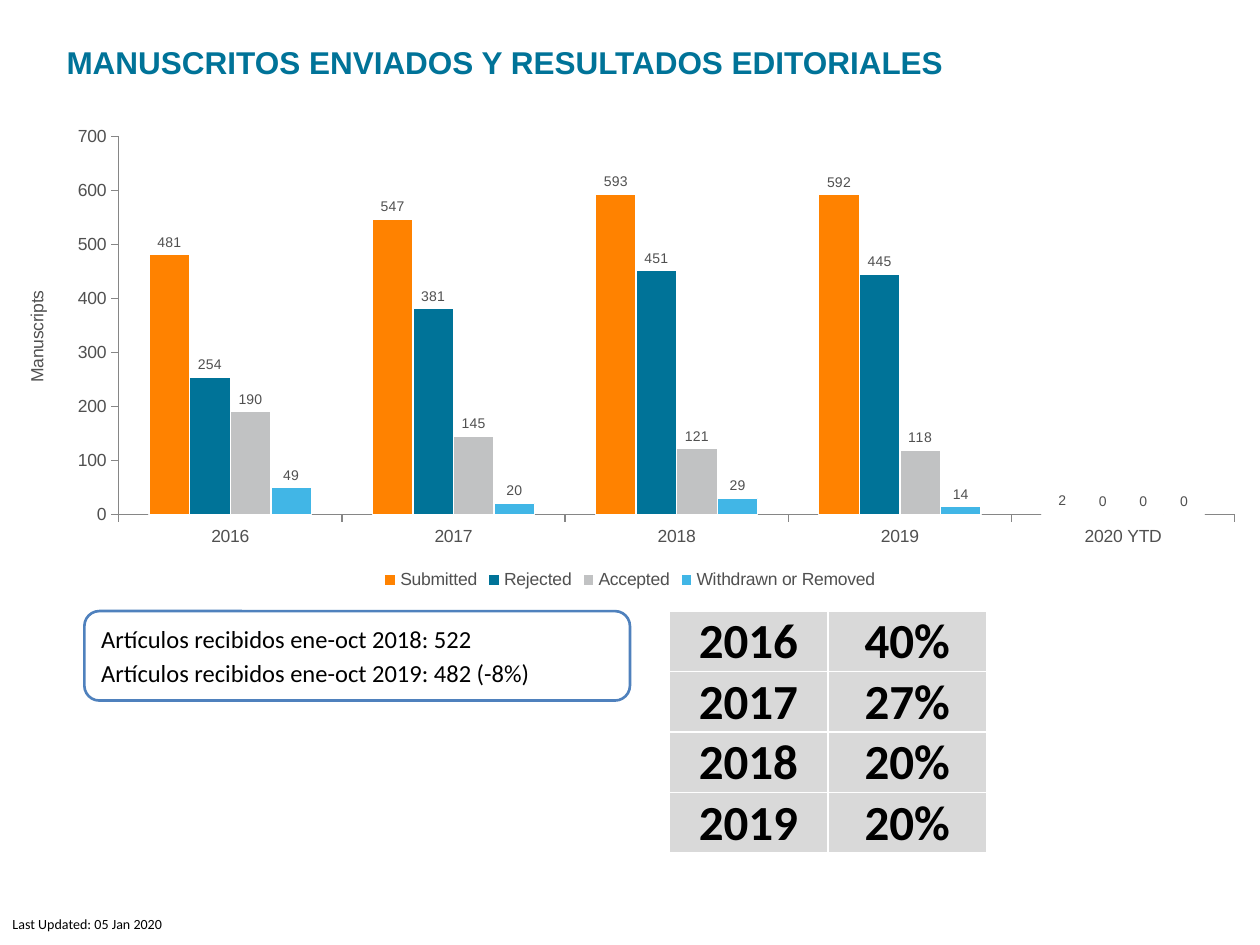
"""Build a slide of manuscripts submitted and editorial outcomes per year."""
from dataclasses import dataclass

from lxml import etree
from pptx import Presentation
from pptx import util as u
from pptx.chart import data
from pptx.dml.color import RGBColor
from pptx.enum import chart as charts, shapes, text
from pptx.oxml import ns

TITLE = "MANUSCRITOS ENVIADOS Y RESULTADOS EDITORIALES"
FOOTER = "Last Updated: 05 Jan 2020"
RECEIVED = [
    "Artículos recibidos ene-oct 2018: 522",
    "Artículos recibidos ene-oct 2019: 482 (-8%)",
]
ACCEPTANCE = [("2016", "40%"), ("2017", "27%"), ("2018", "20%"), ("2019", "20%")]
YEARS = ["2016", "2017", "2018", "2019", "2020 YTD"]
OUTCOMES = [
    ("Submitted", (481, 547, 593, 592, 2), "FF8200"),
    ("Rejected", (254, 381, 451, 445, 0), "007398"),
    ("Accepted", (190, 145, 121, 118, 0), "C1C2C3"),
    ("Withdrawn or Removed", (49, 20, 29, 14, 0), "41B6E6"),
]


@dataclass(frozen=True)
class Theme:
    heading: str = "Arial"
    body: str = "Calibri"
    black: str = "000000"
    white: str = "FFFFFF"
    teal: str = "007398"
    gray: str = "505050"
    axis: str = "868686"
    outline: str = "4F81BD"
    cell: str = "D9D9D9"
    title_size: int = 18
    note_size: int = 14
    table_size: int = 28
    axis_size: int = 10
    small_size: int = 8


THEME = Theme()


def set_font(font, name, size, color, bold=False):
    font.name, font.size, font.bold = name, u.Pt(size), bold
    font.color.rgb = RGBColor.from_string(color)


def set_line(line, color, width):
    line.color.rgb = RGBColor.from_string(color)
    line.width = u.Pt(width)


def write(frame, lines, name, size, color, bold=False):
    for index, line in enumerate(lines):
        para = frame.add_paragraph() if index else frame.paragraphs[0]
        para.alignment = text.PP_ALIGN.LEFT
        if index:
            para.space_before = u.Pt(size * 0.2)
        span = para.add_run()
        span.text = line
        set_font(span.font, name, size, color, bold)


def add_label(page, place, line, *style, wrap=True):
    frame = page.shapes.add_textbox(*map(u.Inches, place)).text_frame
    frame.word_wrap = wrap
    write(frame, [line], *style)


def add_outcome_chart(page):
    chart_data = data.CategoryChartData()
    chart_data.categories = YEARS
    for name, values, _ in OUTCOMES:
        chart_data.add_series(name, values)
    place = map(u.Inches, (0, 0.93, 10, 3.79))
    chart = page.shapes.add_chart(
        charts.XL_CHART_TYPE.COLUMN_CLUSTERED, *place, chart_data).chart
    axis_style = (THEME.heading, THEME.axis_size, THEME.gray)
    set_font(chart.font, *axis_style)
    chart.has_title = False
    chart.has_legend = True
    chart.legend.position = charts.XL_LEGEND_POSITION.BOTTOM
    chart.legend.include_in_layout = False
    set_font(chart.legend.font, *axis_style)

    for axis in (chart.category_axis, chart.value_axis):
        axis.has_major_gridlines = False
        axis.major_tick_mark = charts.XL_TICK_MARK.OUTSIDE
        axis.minor_tick_mark = charts.XL_TICK_MARK.NONE
        set_font(axis.tick_labels.font, *axis_style)
        set_line(axis.format.line, THEME.axis, 0.75)
    chart.value_axis.minimum_scale = 0
    chart.value_axis.maximum_scale = 700
    chart.value_axis.major_unit = 100
    span = chart.value_axis.axis_title.text_frame.paragraphs[0].add_run()
    span.text = "Manuscripts"
    set_font(span.font, *axis_style)

    plot = chart.plots[0]
    plot.vary_by_categories = False
    plot.gap_width, plot.overlap = 150, 0
    for series, (_, _, color) in zip(plot.series, OUTCOMES):
        series.format.fill.solid()
        series.format.fill.fore_color.rgb = RGBColor.from_string(color)
        set_line(series.format.line, THEME.white, 0.75)
        labels = series.data_labels
        labels.show_value = True
        labels.position = charts.XL_LABEL_POSITION.OUTSIDE_END
        set_font(labels.font, THEME.heading, THEME.small_size, THEME.gray)


def add_received_box(page):
    place = map(u.Inches, (0.67, 4.85, 4.33, 0.71))
    box = page.shapes.add_shape(shapes.MSO_SHAPE.ROUNDED_RECTANGLE, *place)
    box.shadow.inherit = False
    box.fill.background()
    set_line(box.line, THEME.outline, 1.5)
    box.text_frame.word_wrap = True
    box.text_frame.vertical_anchor = text.MSO_ANCHOR.MIDDLE
    write(box.text_frame, RECEIVED, THEME.body, THEME.note_size, THEME.black)


def add_borders(cell):
    properties = cell._tc.get_or_add_tcPr()
    for index, side in enumerate(("lnL", "lnR", "lnT", "lnB")):
        line = etree.Element(ns.qn(f"a:{side}"), w=str(u.Pt(1)))
        fill = etree.SubElement(line, ns.qn("a:solidFill"))
        etree.SubElement(fill, ns.qn("a:srgbClr"), val=THEME.white)
        properties.insert(index, line)


def add_acceptance_table(page):
    place = map(u.Inches, (5.31, 4.85, 2.52, 1.92))
    table = page.shapes.add_table(len(ACCEPTANCE), 2, *place).table
    table.first_row = table.horz_banding = False
    for row, values in enumerate(ACCEPTANCE):
        for column, value in enumerate(values):
            cell = table.cell(row, column)
            cell.fill.solid()
            cell.fill.fore_color.rgb = RGBColor.from_string(THEME.cell)
            cell.margin_left = cell.margin_right = cell.margin_top = u.Inches(0.01)
            cell.margin_bottom = 0
            cell.vertical_anchor = text.MSO_ANCHOR.BOTTOM
            write(cell.text_frame, [value], THEME.body, THEME.table_size,
                  THEME.black, True)
            cell.text_frame.paragraphs[0].alignment = text.PP_ALIGN.CENTER
            add_borders(cell)


def main():
    deck = Presentation()
    deck.slide_width, deck.slide_height = u.Inches(10), u.Inches(7.5)
    page = deck.slides.add_slide(deck.slide_layouts[6])
    add_outcome_chart(page)
    add_label(page, (0.43, 0.29, 8.15, 0.31), TITLE,
              THEME.heading, THEME.title_size, THEME.teal, True)
    add_label(page, (0, 7.22, 5.02, 0.28), FOOTER,
              THEME.body, THEME.small_size, THEME.black)
    add_received_box(page)
    add_acceptance_table(page)
    deck.save("out.pptx")


if __name__ == "__main__":
    main()
